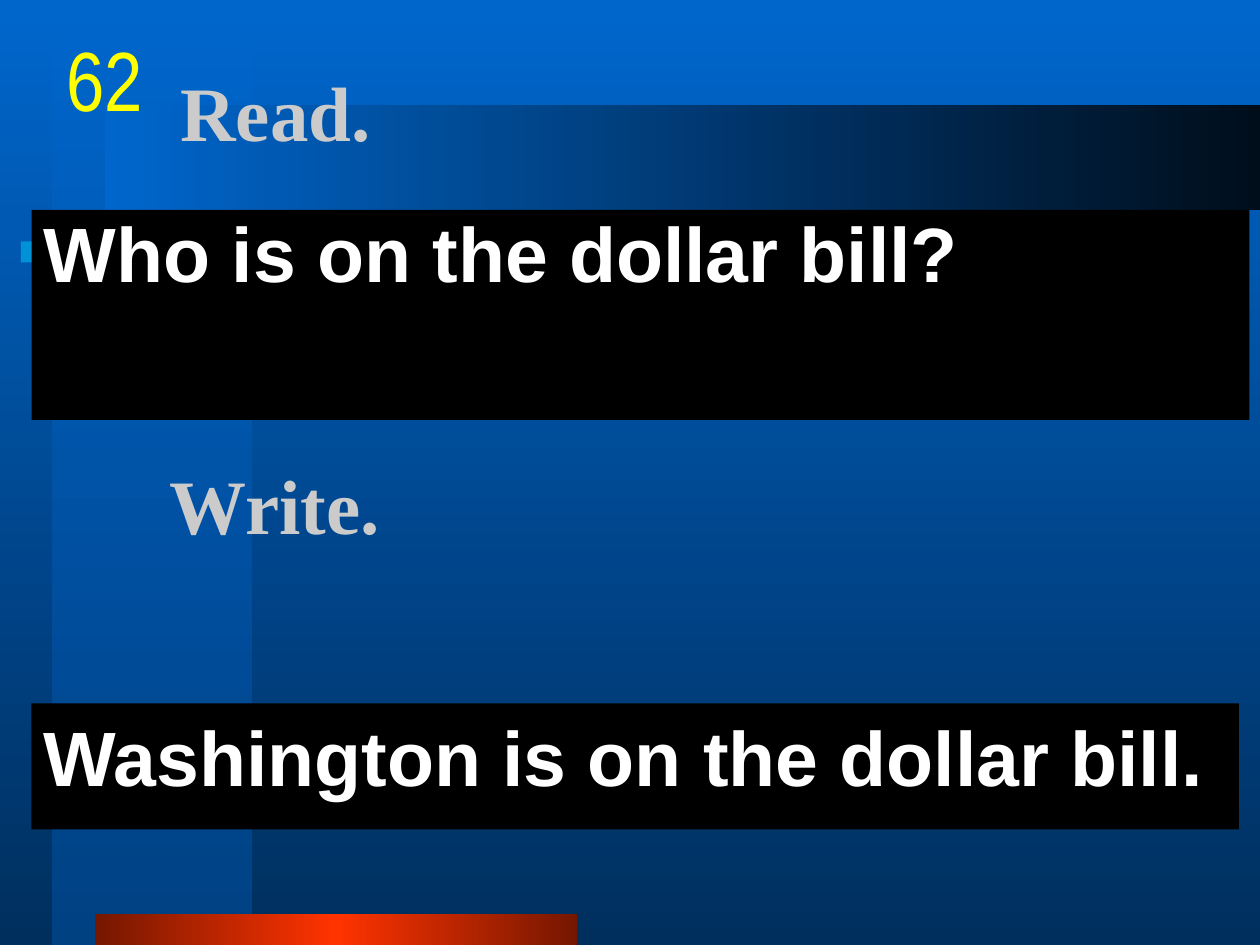
from pptx import Presentation
from pptx.util import Pt
from pptx.dml.color import RGBColor
from pptx.enum.shapes import MSO_SHAPE
from pptx.enum.text import MSO_ANCHOR, PP_ALIGN
from pptx.oxml.ns import qn
from lxml.etree import SubElement

PX = 7620
HUES = {
    "blue": "0066CC", "navy": "002F5E", "mid": "0053A6", "ink": "000E1C",
    "cyan": "00CCFF", "rust": "751700", "red": "FF3300", "black": "000000",
    "white": "FFFFFF", "gray": "CBCBCB", "gold": "FFFF00",
}


def fade(node, alpha):
    SubElement(node, qn("a:alpha")).set("val", str(alpha * 1000))


def blend(fill, root, names, angle, alpha=100):
    fill.gradient()
    fill.gradient_angle = angle
    stops = next(root.iter(qn("a:gsLst")))
    for stop in list(stops):
        stops.remove(stop)
    for i, name in enumerate(names):
        stop = SubElement(stops, qn("a:gs"))
        stop.set("pos", str(100000 * i // (len(names) - 1)))
        tint = SubElement(stop, qn("a:srgbClr"))
        tint.set("val", HUES[name])
        if alpha < 100:
            fade(tint, alpha)


def block(slide, box, names, angle=0, alpha=100):
    shape = slide.shapes.add_shape(MSO_SHAPE.RECTANGLE, *[n * PX for n in box])
    shape.shadow.inherit = False
    shape.line.fill.background()
    if len(names) > 1:
        blend(shape.fill, shape.element, names, angle, alpha)
    else:
        shape.fill.solid()
        shape.fill.fore_color.rgb = RGBColor.from_string(HUES[names[0]])
        if alpha < 100:
            fade(next(shape.element.spPr.iter(qn("a:srgbClr"))), alpha)
    return shape


def write(shape, text, size=44, font="Arial", hue="white", bold=True, wrap=True, pad=12,
          align=PP_ALIGN.LEFT, anchor=MSO_ANCHOR.TOP, gap=0, lead=1.0, hang=0):
    frame = shape.text_frame
    frame.word_wrap = wrap
    frame.vertical_anchor = anchor
    frame.margin_left = frame.margin_right = pad * PX
    para = frame.paragraphs[0]
    para.alignment = align
    para.space_before = Pt(gap)
    para.line_spacing = lead
    if hang:
        props = para._p.get_or_add_pPr()
        props.set("marL", str(hang * PX))
        props.set("indent", str(-hang * PX))
    run = para.add_run()
    run.text = text
    run.font.size = Pt(size)
    run.font.name = font
    run.font.bold = bold
    run.font.color.rgb = RGBColor.from_string(HUES[hue])


def label(slide, box, text, **look):
    write(slide.shapes.add_textbox(*[n * PX for n in box]), text, **look)


def cue(slide, box, text):
    label(slide, box, text, font="Times New Roman", hue="gray", anchor=MSO_ANCHOR.MIDDLE)


def panel(slide, box, text, lead=1.0):
    write(block(slide, box, ["black"]), text, gap=4.5, lead=lead, hang=45)


def decor(slide, box):
    x, y, w, h = box
    blend(slide.background.fill, slide.element, ["blue", "navy"], 270)
    block(slide, (x + 50, y, 190, h), ["blue", "mid"], 270, 50)
    block(slide, (x + 20, y + 230, 620, 20), ["cyan"], alpha=50)
    block(slide, (x + 90, y + h - 30, 460, 30), ["rust", "red", "rust"])
    block(slide, (x + 100, y + 100, w - 100, 100), ["blue", "ink"])


def main():
    deck = Presentation()
    deck.slide_width, deck.slide_height = 1200 * PX, 900 * PX
    slide = deck.slides.add_slide(deck.slide_layouts[6])
    decor(slide, (0, 0, 1200, 900))
    cue(slide, (160, 30, 1020, 150), "Read.")
    panel(slide, (30, 200, 1160, 200), "Who is on the dollar bill?", lead=0.9)
    cue(slide, (150, 380, 1020, 200), "Write.")
    panel(slide, (30, 670, 1150, 120), "Washington is on the dollar bill.")
    label(slide, (60, 20, 80, 100), "62", size=48, font="Arial Narrow", hue="gold",
          bold=False, wrap=False, pad=0, align=PP_ALIGN.CENTER)
    deck.save("out.pptx")


if __name__ == "__main__":
    main()
